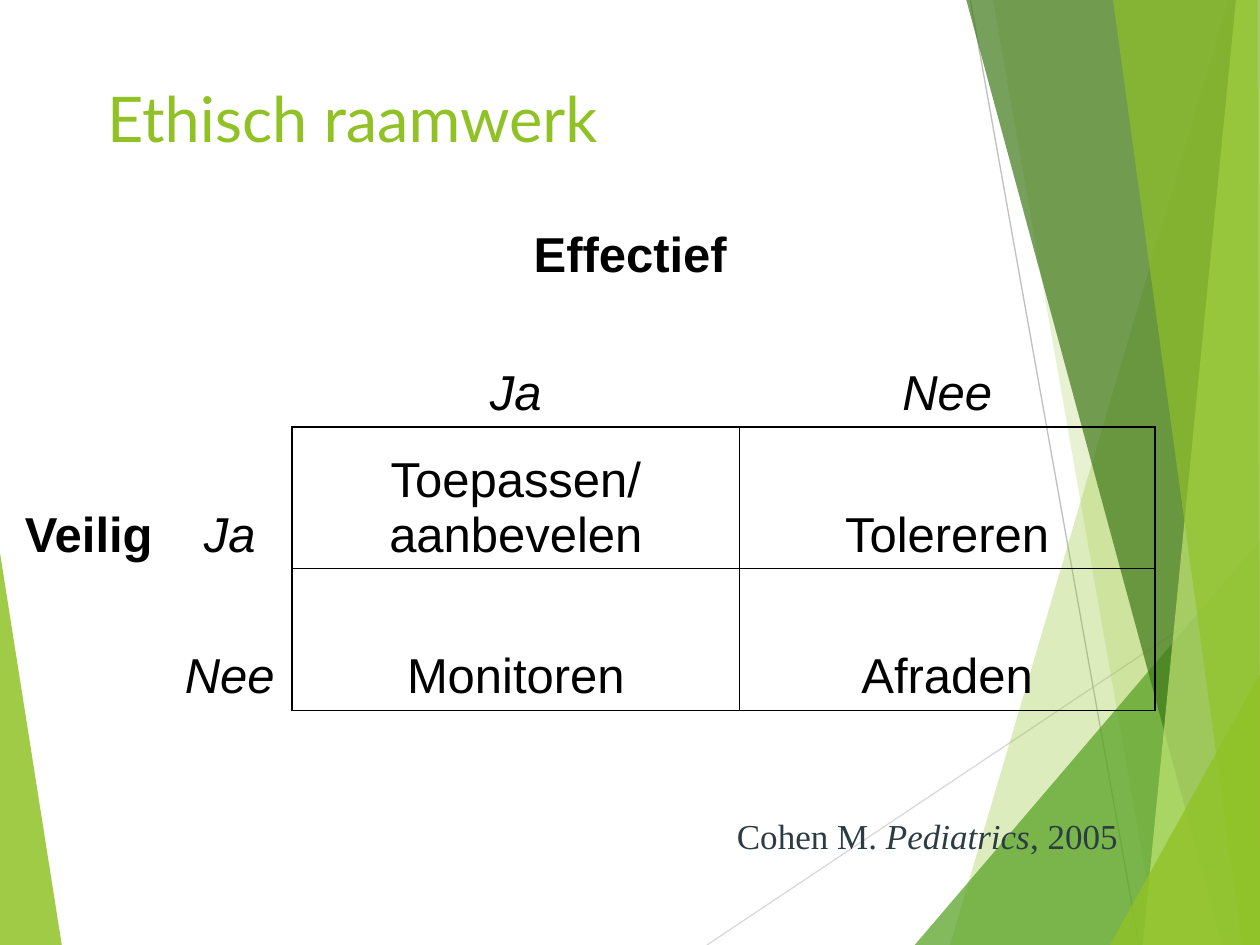
import pptx
import pptx.dml.color
import pptx.enum.shapes
import pptx.enum.text
import pptx.oxml
import pptx.oxml.ns
import pptx.util

Pt = pptx.util.Pt
qn = pptx.oxml.ns.qn
ALIGN = pptx.enum.text.PP_ALIGN
ANCHOR = pptx.enum.text.MSO_ANCHOR

COLORS = {
    "lime": "90C226", "green": "54A021", "dark": "3F7819", "pale": "C0E474",
    "line": "BFBFBF", "light_line": "D9D9D9", "text": "000000", "source": "2C3C43",
}
NO_STYLE = "{2D5ABB26-0587-4C30-8999-92F81FD0307C}"

# Facets: colour, opacity in percent, corner points
LEFT_FACET = ("lime", 85, [(0, 316), (35.3, 540), (0, 540)])
RIGHT_FACETS = [
    ("lime", 30, [(702, 0), (542.9, 540), (720, 540), (720, 0)]),
    ("lime", 20, [(567.4, 0), (661.7, 540), (720, 540), (720, 0)]),
    ("green", 72, [(522.7, 540), (720, 309), (720, 540)]),
    ("dark", 70, [(552.2, 0), (698.4, 540), (720, 540), (720, 0)]),
    ("pale", 70, [(706.3, 0), (653, 540), (720, 540), (720, 0)]),
    ("lime", 65, [(636, 0), (710, 540), (720, 540), (718.6, 0)]),
    ("lime", 80, [(634.3, 540), (720, 385.2), (720, 540)]),
]

BOLD = {"bold": True}
ITALIC = {"italic": True}
# Cells: (row, column): text, font format, alignment
CELLS = {
    (0, 2): ("Effectief", BOLD, ALIGN.RIGHT),
    (1, 2): ("Ja", ITALIC, ALIGN.CENTER),
    (1, 3): ("Nee", ITALIC, ALIGN.CENTER),
    (2, 0): ("Veilig", BOLD, ALIGN.LEFT),
    (2, 1): ("Ja", ITALIC, ALIGN.CENTER),
    (2, 2): ("Toepassen/\naanbevelen", {}, ALIGN.CENTER),
    (2, 3): ("Tolereren", {}, ALIGN.CENTER),
    (3, 1): ("Nee", ITALIC, ALIGN.CENTER),
    (3, 2): ("Monitoren", {}, ALIGN.CENTER),
    (3, 3): ("Afraden", {}, ALIGN.CENTER),
}


def rgb(name):
    return pptx.dml.color.RGBColor.from_string(COLORS[name])


def format_font(font, color, **values):
    for name, value in values.items():
        setattr(font, name, value)
    font.color.rgb = rgb(color)


def add_facet(s, color, opacity, points):
    corners = [(Pt(x), Pt(y)) for x, y in points]
    builder = s.shapes.build_freeform(*corners[0])
    builder.add_line_segments(corners[1:], close=True)
    sp = builder.convert_to_shape()
    sp.shadow.inherit = False
    sp.fill.solid()
    sp.fill.fore_color.rgb = rgb(color)
    clr = sp._element.spPr.find(".//" + qn("a:srgbClr"))
    clr.makeelement(qn("a:alpha"), {})
    alpha = pptx.oxml.parse_xml(
        f'<a:alpha {pptx.oxml.ns.nsdecls("a")} val="{opacity * 1000}"/>')
    clr.append(alpha)
    sp.line.fill.background()


def add_line(s, color, x1, y1, x2, y2):
    line = s.shapes.add_connector(
        pptx.enum.shapes.MSO_CONNECTOR.STRAIGHT, Pt(x1), Pt(y1), Pt(x2), Pt(y2))
    line.line.color.rgb = rgb(color)
    line.line.width = Pt(0.75)
    line._element.spPr.append(
        pptx.oxml.parse_xml(f'<a:effectLst {pptx.oxml.ns.nsdecls("a")}/>'))


def set_title(s, text):
    sp = s.shapes.title
    sp.left, sp.top, sp.width, sp.height = Pt(54), Pt(42), Pt(498), Pt(90)
    tf = sp.text_frame
    tf.text = text
    tf.vertical_anchor = ANCHOR.TOP
    p = tf.paragraphs[0]
    p.alignment = ALIGN.LEFT
    format_font(p.runs[0].font, "lime", name="Lato", size=Pt(36))


def set_borders(cell, sides):
    tcPr = cell._tc.get_or_add_tcPr()
    for i, side in enumerate(sides):
        tcPr.insert(i, pptx.oxml.parse_xml(
            f'<a:ln{side} {pptx.oxml.ns.nsdecls("a")} w="12700"><a:solidFill>'
            f'<a:srgbClr val="{COLORS["text"]}"/></a:solidFill></a:ln{side}>'))


def add_framework(s):
    widths, heights = [88.5, 71.5, 255.5, 237.5], [44.5, 78.5, 81, 81]
    table = s.shapes.add_table(
        len(heights), len(widths), Pt(7), Pt(121),
        Pt(sum(widths)), Pt(sum(heights))).table
    table.first_row = table.horz_banding = False
    table._tbl.tblPr.find(qn("a:tableStyleId")).text = NO_STYLE
    for column, width in zip(table.columns, widths):
        column.width = Pt(width)
    for row, height in zip(table.rows, heights):
        row.height = Pt(height)
    for cell in table.iter_cells():
        cell.fill.background()
        cell.vertical_anchor = ANCHOR.BOTTOM
    for (row, col), (text, style, align) in CELLS.items():
        cell = table.cell(row, col)
        cell.text_frame.text = text
        for p in cell.text_frame.paragraphs:
            p.alignment = align
            format_font(p.runs[0].font, "text", name="Arial", size=Pt(28), **style)
    # Grid around the four outcomes, shared edges set on both sides
    for i in (2, 3):
        set_borders(table.cell(1, i), "B")
        set_borders(table.cell(i, 1), "R")
        for j in (2, 3):
            set_borders(table.cell(i, j), "LRTB")


def add_source(s):
    tf = s.shapes.add_textbox(Pt(414), Pt(462), Pt(246), Pt(31)).text_frame
    tf.word_wrap = True
    p = tf.paragraphs[0]
    for text, italic in [("Cohen M. ", False), ("Pediatrics", True), (", 2005", False)]:
        r = p.add_run()
        r.text = text
        format_font(r.font, "source", name="Times New Roman", size=Pt(20), italic=italic)


def main():
    prs = pptx.Presentation()
    prs.slide_width, prs.slide_height = Pt(720), Pt(540)
    s = prs.slides.add_slide(prs.slide_layouts[5])

    # Background decoration
    add_facet(s, *LEFT_FACET)
    add_line(s, "light_line", 404, 540, 720, 329)
    add_line(s, "line", 554.5, 0, 651, 540)
    for facet in RIGHT_FACETS:
        add_facet(s, *facet)

    # Content
    set_title(s, "Ethisch raamwerk")
    add_framework(s)
    add_source(s)
    prs.save("out.pptx")


if __name__ == "__main__":
    main()
